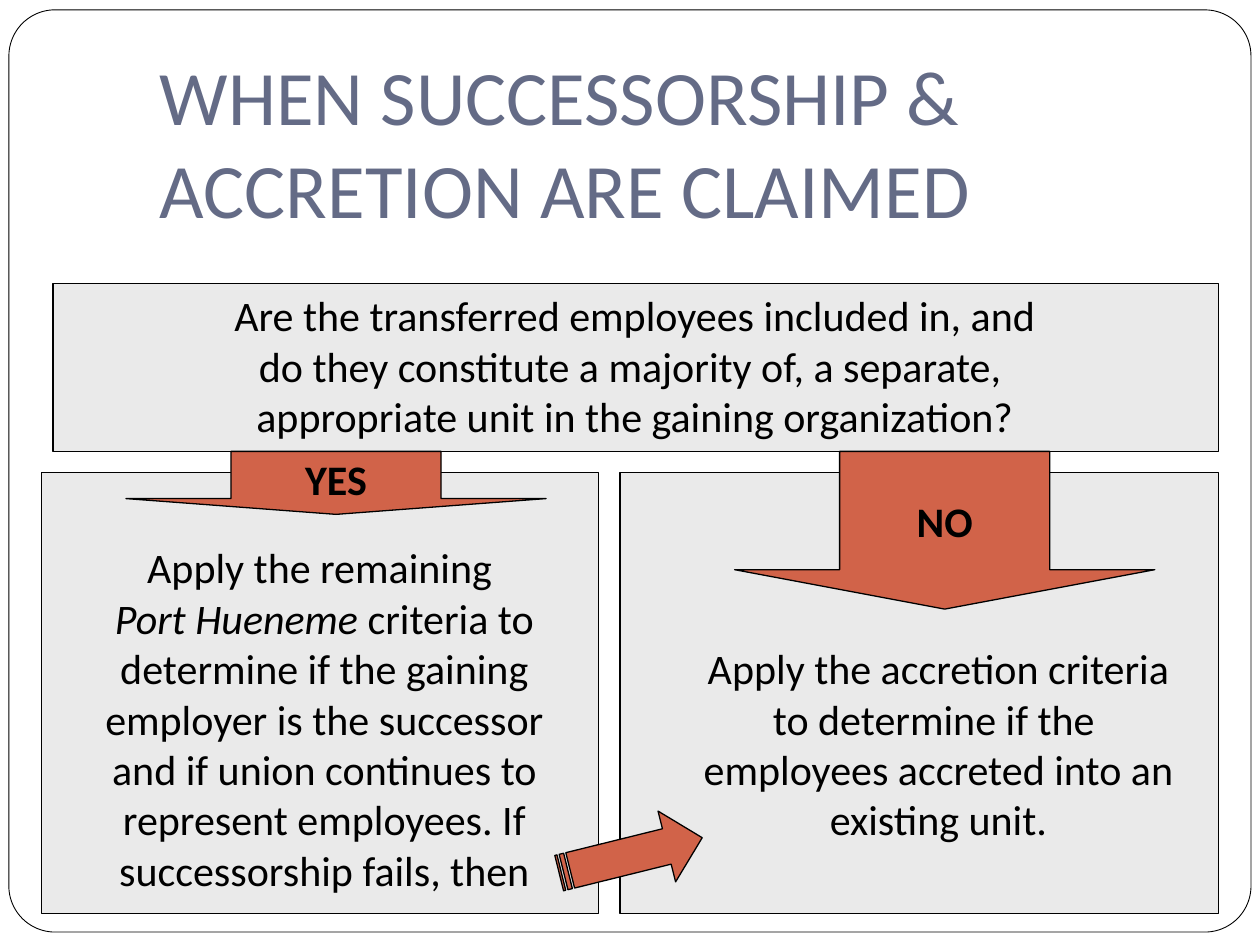
from pptx import Presentation
from pptx import util as u
from pptx.dml.color import RGBColor
from pptx.enum import shapes, text

COLORS = {"title": "646B86", "ink": "000000", "panel": "EAEAEA",
          "arrow": "D16349", "paper": "FFFFFF"}
FONT = "Calibri"
SHAPE = shapes.MSO_SHAPE

TITLE = ["WHEN SUCCESSORSHIP &", "ACCRETION ARE CLAIMED"]
QUESTION = ["Are the transferred employees included in, and",
            "do they constitute a majority of, a separate, ",
            "appropriate unit in the gaining organization?"]
YES_STEP = ["Apply the remaining ",
            [("Port Hueneme", True), (" criteria to", False)],
            "determine if the gaining",
            "employer is the successor",
            "and if union continues to",
            "represent employees. If",
            "successorship fails, then"]
NO_STEP = ["Apply the accretion criteria", "to determine if the ",
           "employees accreted into an", "existing unit."]

QUESTION_TOP, QUESTION_HEIGHT = 5.72, 3.38
ARROW_TOP = QUESTION_TOP + QUESTION_HEIGHT
PANELS = [(1.07, QUESTION_TOP, 23.5, QUESTION_HEIGHT),
          (0.84, 9.53, 11.23, 8.89),
          (12.5, 9.53, 12.07, 8.89)]
ARROWS = [("NO", (14.81, ARROW_TOP, 8.47, 3.18)),
          ("YES", (2.54, ARROW_TOP, 8.47, 1.27))]
TEXTS = [(QUESTION, (1.27, QUESTION_TOP, 23.06, 3.33), True),
         (YES_STEP, (1.83, 10.8, 9.42, 7.44), False),
         (NO_STEP, (13.89, 12.83, 10.06, 4.37), False)]


def cm(box):
    """Turn a box of centimetres into lengths."""
    return [u.Cm(v) for v in box]


def write(tf, lines, size=24, color="ink", bold=False, wrap=False,
          align=text.PP_ALIGN.CENTER, anchor=text.MSO_ANCHOR.TOP):
    """Fill a text frame with one paragraph per line."""
    tf.auto_size = text.MSO_AUTO_SIZE.NONE
    tf.word_wrap = wrap
    tf.vertical_anchor = anchor
    for i, line in enumerate(lines):
        p = tf.add_paragraph() if i else tf.paragraphs[0]
        p.alignment = align
        for words, italic in [(line, False)] if isinstance(line, str) else line:
            r = p.add_run()
            r.text = words
            r.font.name, r.font.size = FONT, u.Pt(size)
            r.font.bold, r.font.italic = bold, italic
            r.font.color.rgb = RGBColor.from_string(COLORS[color])


def add_shape(s, kind, box, fill, width=0.75):
    """Add a filled, black-outlined preset shape."""
    sp = s.shapes.add_shape(kind, *cm(box))
    sp.shadow.inherit = False
    sp.fill.solid()
    sp.fill.fore_color.rgb = RGBColor.from_string(COLORS[fill])
    sp.line.color.rgb = RGBColor.from_string(COLORS["ink"])
    sp.line.width = u.Pt(width)
    return sp


def main():
    """Build the slide and save it."""
    prs = Presentation()
    prs.slide_width, prs.slide_height = u.Cm(25.4), u.Cm(19.05)
    s = prs.slides.add_slide(prs.slide_layouts[5])

    frame = add_shape(s, SHAPE.ROUNDED_RECTANGLE, (0.18, 0.2, 25.04, 18.59), "paper", 0.5)
    frame.adjustments[0] = 0.05
    s.shapes._spTree.insert(2, frame._element)

    title = s.shapes.title
    title.left, title.top, title.width, title.height = cm((2.97, 0.84, 17.17, 4.01))
    write(title.text_frame, TITLE, size=44, color="title",
          align=text.PP_ALIGN.LEFT, anchor=text.MSO_ANCHOR.MIDDLE)

    for box in PANELS:
        add_shape(s, SHAPE.RECTANGLE, box, "panel")
    for label, box in ARROWS:
        sp = add_shape(s, SHAPE.DOWN_ARROW, box, "arrow")
        sp.adjustments[0], sp.adjustments[1] = 0.5, 0.25
        write(sp.text_frame, [label], bold=True, anchor=text.MSO_ANCHOR.MIDDLE)
    for lines, box, wrap in TEXTS:
        write(s.shapes.add_textbox(*cm(box)).text_frame, lines, wrap=wrap)

    link = add_shape(s, SHAPE.STRIPED_RIGHT_ARROW, (11.23, 16.51, 2.97, 1.47), "arrow")
    link.rotation = 346.1

    prs.save("out.pptx")


if __name__ == "__main__":
    main()
